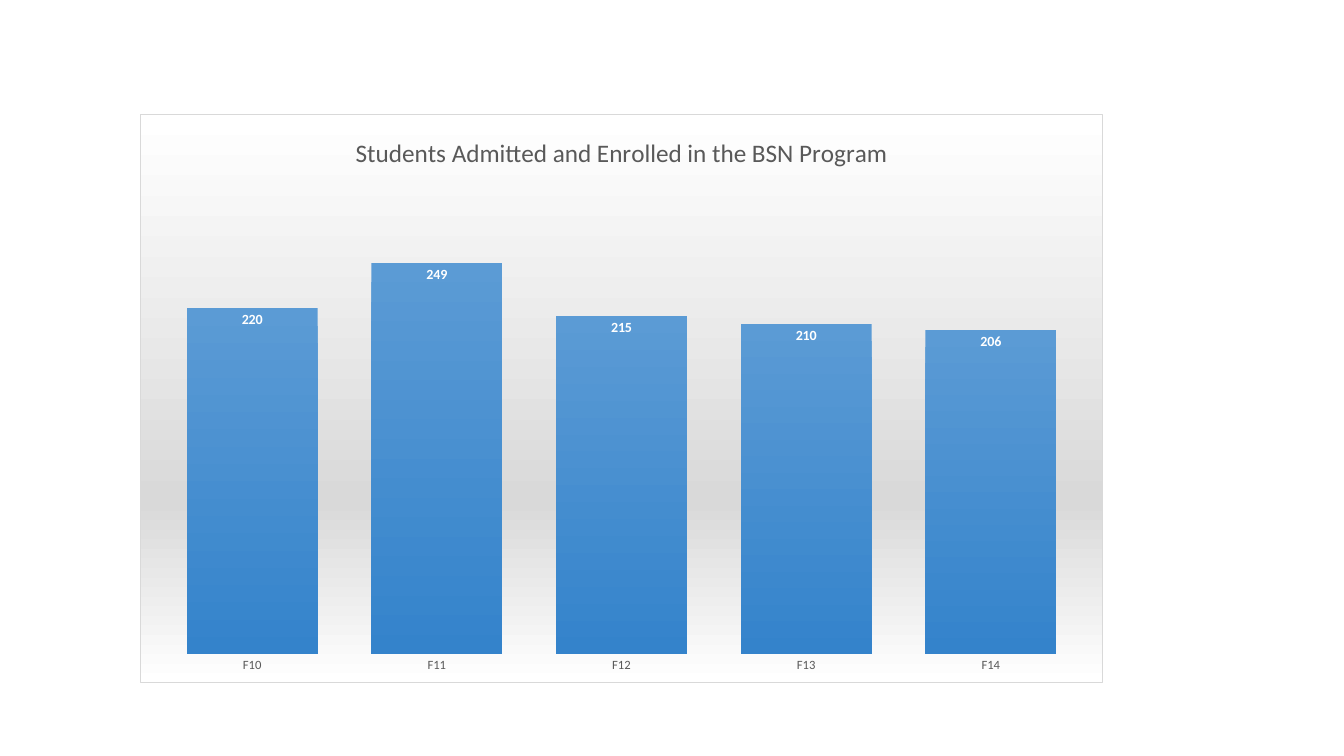
from dataclasses import dataclass

from lxml.etree import SubElement
from pptx import Presentation
from pptx.chart.data import CategoryChartData
from pptx.dml.color import RGBColor
from pptx.enum.chart import XL_CHART_TYPE, XL_LABEL_POSITION, XL_TICK_LABEL_POSITION, XL_TICK_MARK
from pptx.oxml import parse_xml
from pptx.oxml.ns import nsdecls, qn
from pptx.util import Inches, Pt


@dataclass(frozen=True)
class Theme:
    face: str = "Calibri"
    text: str = "595959"
    label: str = "FFFFFF"
    edge: str = "D9D9D9"
    panel: tuple = ((0, "FFFFFF"), (68, "D9D9D9"), (100, "FFFFFF"))
    bar: tuple = ((0, "5B9BD5"), (100, "3483CB"))
    title_size: int = 18
    label_size: int = 10
    axis_size: int = 9


THEME = Theme()
TITLE = "Students Admitted and Enrolled in the BSN Program"
COUNTS = {"F10": 220, "F11": 249, "F12": 215, "F13": 210, "F14": 206}
PLOT = {"x": 0.02, "y": 0.12, "w": 0.96, "h": 0.83}


def apply(item, values):
    for name, value in values.items():
        setattr(item, name, value)


def style(font, size, color, bold=False):
    apply(font, {"name": THEME.face, "size": Pt(size), "bold": bold})
    font.color.rgb = RGBColor.from_string(color)


def shade(stops, edge=None):
    """Return shape properties with a vertical gradient and an optional edge."""
    marks = "".join(
        f'<a:gs pos="{spot * 1000}"><a:srgbClr val="{color}"/></a:gs>'
        for spot, color in stops
    )
    fill = f'<a:solidFill><a:srgbClr val="{edge}"/></a:solidFill>' if edge else "<a:noFill/>"
    return parse_xml(
        f'<c:spPr {nsdecls("c", "a")}>'
        f'<a:gradFill><a:gsLst>{marks}</a:gsLst><a:lin ang="5400000" scaled="0"/></a:gradFill>'
        f'<a:ln w="{Pt(0.75)}">{fill}</a:ln></c:spPr>'
    )


def place_plot(chart):
    area = chart._chartSpace.chart.plotArea
    for old in area.findall(qn("c:layout")):
        area.remove(old)
    layout = parse_xml(f'<c:layout {nsdecls("c")}/>')
    manual = SubElement(layout, qn("c:manualLayout"))
    modes = {"layoutTarget": "inner", "xMode": "edge", "yMode": "edge"}
    for name, value in (modes | PLOT).items():
        SubElement(manual, qn(f"c:{name}")).set("val", str(value))
    area.insert(0, layout)


def set_title(chart):
    chart.has_title = True
    title = chart.chart_title
    title.include_in_layout = False
    title.text_frame.text = TITLE
    style(title.text_frame.paragraphs[0].runs[0].font, THEME.title_size, THEME.text)


def set_axes(chart):
    apply(chart.value_axis, {
        "minimum_scale": 0, "maximum_scale": 300,
        "has_major_gridlines": False, "visible": False,
    })
    axis = chart.category_axis
    apply(axis, {
        "major_tick_mark": XL_TICK_MARK.NONE,
        "minor_tick_mark": XL_TICK_MARK.NONE,
        "tick_label_position": XL_TICK_LABEL_POSITION.NEXT_TO_AXIS,
    })
    axis.format.line.fill.background()
    style(axis.tick_labels.font, THEME.axis_size, THEME.text)


def set_bars(chart):
    plot = chart.plots[0]
    apply(plot, {"gap_width": 41, "vary_by_categories": False, "has_data_labels": True})
    labels = plot.data_labels
    apply(labels, {"show_value": True, "position": XL_LABEL_POSITION.INSIDE_END})
    style(labels.font, THEME.label_size, THEME.label, bold=True)
    plot.series[0]._element.find(qn("c:tx")).addnext(shade(THEME.bar))


def add_bars(slide):
    data = CategoryChartData()
    data.categories = list(COUNTS)
    data.add_series("Series 1", list(COUNTS.values()))
    chart = slide.shapes.add_chart(
        XL_CHART_TYPE.COLUMN_CLUSTERED,
        Inches(1.39), Inches(1.13), Inches(9.55), Inches(5.65), data,
    ).chart
    chart.has_legend = False
    style(chart.font, THEME.label_size, THEME.text)
    set_title(chart)
    set_axes(chart)
    set_bars(chart)
    place_plot(chart)
    # Panel behind the chart
    chart._chartSpace.chart.addnext(shade(THEME.panel, THEME.edge))


def main():
    deck = Presentation()
    apply(deck, {"slide_width": Inches(13.33), "slide_height": Inches(7.5)})
    slide = deck.slides.add_slide(deck.slide_layouts[6])
    add_bars(slide)
    deck.save("out.pptx")


if __name__ == "__main__":
    main()
